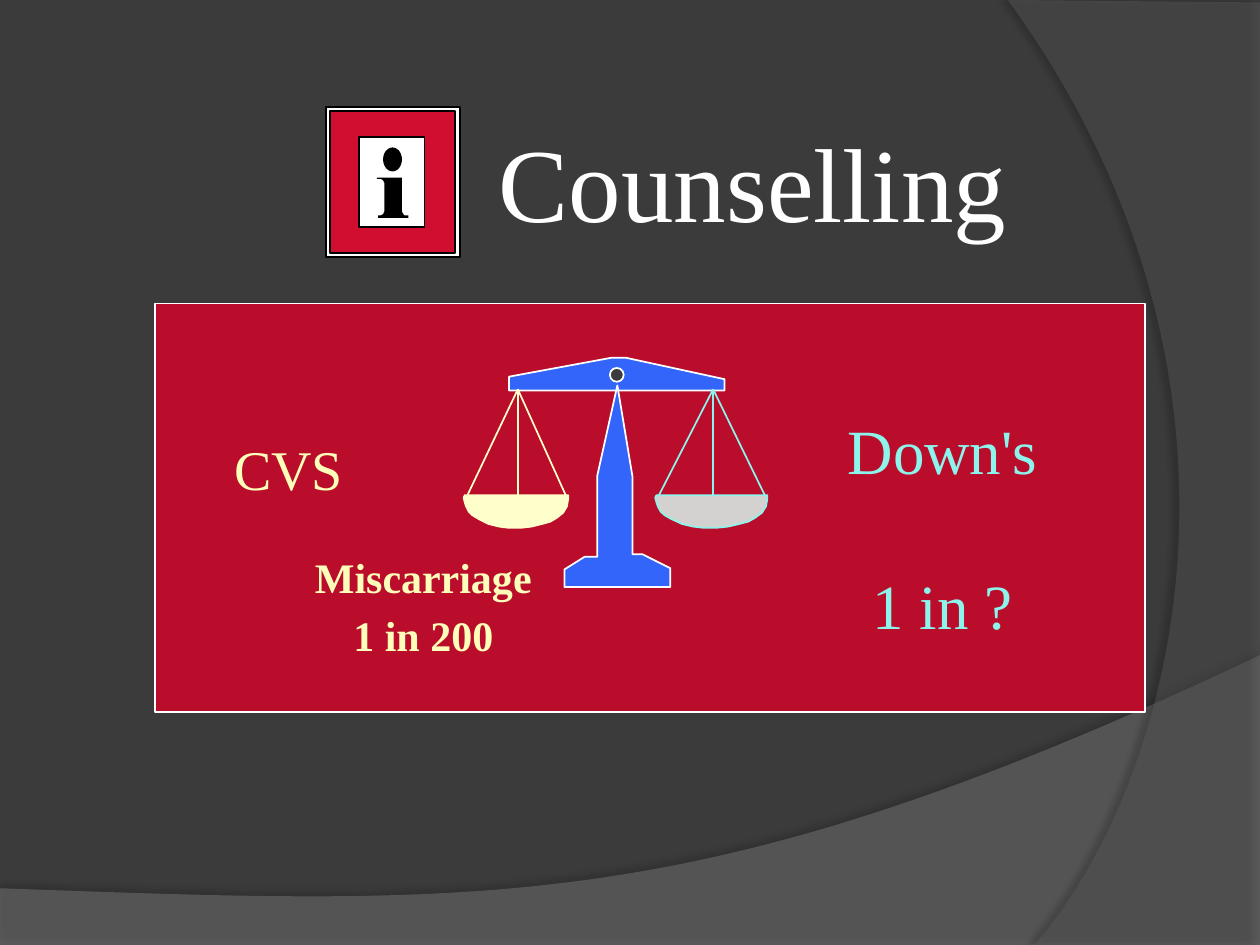
from lxml import etree
from pptx import Presentation
from pptx.dml.color import RGBColor
from pptx.enum.shapes import MSO_CONNECTOR as CONN, MSO_SHAPE as SHAPE
from pptx.enum.text import MSO_ANCHOR, MSO_AUTO_SIZE, PP_ALIGN
from pptx.oxml import parse_xml
from pptx.oxml.ns import nsdecls, qn
from pptx.util import Inches, Pt

FONT = "Times New Roman"
BACK, WHITE, BLACK = "3B3B3B", "FFFFFF", "000000"
BLUE, CREAM, AQUA, YELLOW = "3365FB", "FFFFCC", "8CF4EA", "FCFEB9"

# Swooshes: points before the curve, its four Bezier points, points after it
LOWER = ([(0, 7.5), (10, 7.5)],
         [(10, 5.2), (5.59, 7.29), (3.91, 7.19), (0, 7.05)], [])
RIGHT = ([(10, 0.02), (10, 7.5)],
         [(8.21, 7.5), (9.35, 6.19), (10.18, 3), (8, 0)], [])
SWOOSHES = [  # outline, fill, opacity, shadow opacity, distance, direction
    (LOWER, "7F7F7F", 45, 35, 3.5, 270),
    (RIGHT, "5E5E5E", 40, 45, 4, 180),
]

BEAM = [(4.04, 3.1), (5.75, 3.1), (5.75, 3.01), (4.97, 2.84), (4.85, 2.84),
        (4.04, 2.99)]
STAND = [(4.9, 3.06), (5.02, 3.78), (5.02, 4.4), (5.1, 4.4), (5.32, 4.51),
         (5.32, 4.66), (4.48, 4.66), (4.48, 4.52), (4.64, 4.42),
         (4.74, 4.42), (4.74, 3.78)]
PAN_TOP, PAN_WIDTH = 3.93, 0.83
PAN = [(0.01, 0), (0, 0.02), (0.01, 0.06), (0.02, 0.09), (0.04, 0.13),
       (0.07, 0.16), (0.12, 0.19), (0.2, 0.23), (0.28, 0.25), (0.36, 0.26),
       (0.45, 0.26), (0.54, 0.25), (0.62, 0.23), (0.69, 0.21), (0.74, 0.18),
       (0.79, 0.14), (0.82, 0.09), (0.83, 0.03), (0.83, 0)]
PANS = [  # left, width, fill, line, hook x, string ends
    (3.68, 0.83, CREAM, CREAM, 4.11, (4.49, 4.11, 3.71)),
    (5.2, 0.89, "D4D2D0", AQUA, 5.66, (6.07, 5.66, 5.23)),
]

SIGN = [  # shape, place, fill, line
    (SHAPE.RECTANGLE, (2.59, 0.85, 1.06, 1.19), WHITE, BLACK),
    (SHAPE.RECTANGLE, (2.62, 0.88, 0.99, 1.13), "CF0E30", BLACK),
    (SHAPE.RECTANGLE, (2.85, 1.09, 0.52, 0.71), WHITE, BLACK),
    (SHAPE.OVAL, (3.04, 1.17, 0.15, 0.19), BLACK, None),
]
STEM = [(2.99, 1.41), (3.19, 1.41), (3.19, 1.68), (3.2, 1.7), (3.21, 1.71),
        (3.24, 1.71), (3.24, 1.73), (3, 1.73), (3, 1.71), (3.02, 1.71),
        (3.04, 1.7), (3.05, 1.68), (3.05, 1.45), (3.04, 1.43), (3.02, 1.42),
        (2.99, 1.42)]

TITLE = ("Counselling", (3.86, 0.85, 4.65, 1.1), 60, WHITE)
LABELS = [  # lines, place, size, colour, bold, align, spacing, gap in points
    (["Down's", "1 in ?"], (6.28, 3.4, 2.4, 1.78), 36, AQUA, False,
     PP_ALIGN.CENTER, 0.6, 62.5),
    (["CVS"], (1.76, 3.37, 1.17, 0.63), 32, YELLOW, False,
     PP_ALIGN.LEFT, 1.0, 0),
    (["Miscarriage", "1 in 200"], (2.29, 4.41, 2.14, 0.86), 24, YELLOW, True,
     PP_ALIGN.CENTER, 0.7, 12.5),
]


def rgb(value):
    return RGBColor.from_string(value)


def paint(shape, fill, line=None):
    shape.shadow.inherit = False
    shape.fill.solid()
    shape.fill.fore_color.rgb = rgb(fill)
    if line:
        shape.line.color.rgb = rgb(line)
        shape.line.width = Pt(1)
    else:
        shape.line.fill.background()
    return shape


def add_preset(shapes, kind, place, fill, line=None):
    return paint(shapes.add_shape(kind, *map(Inches, place)), fill, line)


def add_outline(shapes, points, fill, line=None):
    pts = [(Inches(x), Inches(y)) for x, y in points]
    builder = shapes.build_freeform(*pts[0])
    builder.add_line_segments(pts[1:], close=True)
    return paint(builder.convert_to_shape(), fill, line)


def add_string(shapes, start, end, color):
    c = shapes.add_connector(CONN.STRAIGHT, *map(Inches, start + end))
    c.line.color.rgb = rgb(color)
    c.line.width = Pt(1)
    etree.SubElement(c._element.spPr, qn("a:effectLst"))


def bezier(curve, steps=60):
    """Return points along a cubic Bezier curve."""
    points = []
    for i in range(steps + 1):
        t = i / steps
        weights = ((1 - t) ** 3, 3 * t * (1 - t) ** 2,
                   3 * t * t * (1 - t), t ** 3)
        points.append(tuple(sum(w * p[k] for w, p in zip(weights, curve))
                            for k in (0, 1)))
    return points


def add_swoosh(shapes, outline, fill, opacity, shade, dist, direction):
    before, curve, after = outline
    sp = add_outline(shapes, before + bezier(curve) + after, fill)
    color = sp._element.spPr.find(qn("a:solidFill"))[0]
    etree.SubElement(color, qn("a:alpha"), val=str(opacity * 1000))
    effects = sp._element.spPr.find(qn("a:effectLst"))
    effects.append(parse_xml(
        f'<a:outerShdw {nsdecls("a")} blurRad="{Pt(4)}" dist="{Pt(dist)}" '
        f'dir="{direction * 60000}" algn="ctr" rotWithShape="0">'
        f'<a:srgbClr val="{BLACK}"><a:alpha val="{shade * 1000}"/>'
        '</a:srgbClr></a:outerShdw>'))


def write(shape, lines, size, color, bold=False, align=PP_ALIGN.LEFT,
          spacing=1.0, gap=0):
    tf = shape.text_frame
    tf.word_wrap = True
    tf.auto_size = MSO_AUTO_SIZE.NONE
    tf.vertical_anchor = MSO_ANCHOR.TOP
    tf.margin_left = tf.margin_right = Inches(0.1)
    tf.margin_top, tf.margin_bottom = Inches(0.08), Inches(0.05)
    for i, text in enumerate(lines):
        p = tf.add_paragraph() if i else tf.paragraphs[0]
        p.alignment = align
        p.line_spacing = spacing
        p.space_before = Pt(gap if i else 0)
        r = p.add_run()
        r.text = text
        r.font.name, r.font.size, r.font.bold = FONT, Pt(size), bold
        r.font.color.rgb = rgb(color)


def add_scales(shapes):
    add_outline(shapes, BEAM, BLUE, WHITE)
    add_preset(shapes, SHAPE.OVAL, (4.84, 2.92, 0.11, 0.11), BACK, WHITE)
    add_outline(shapes, STAND, BLUE, WHITE)
    for left, width, fill, line, hook, ends in PANS:
        for end in ends:
            add_string(shapes, (hook, 3.09), (end, PAN_TOP), line)
        add_outline(shapes, [(left + x * width / PAN_WIDTH, PAN_TOP + y)
                             for x, y in PAN], fill, line)


def main():
    prs = Presentation()
    prs.slide_width, prs.slide_height = Inches(10), Inches(7.5)
    s = prs.slides.add_slide(prs.slide_layouts[5])
    s.background.fill.solid()
    s.background.fill.fore_color.rgb = rgb(BACK)

    text, place, size, color = TITLE
    title = s.shapes.title
    title.left, title.top, title.width, title.height = map(Inches, place)
    write(title, [text], size, color)

    for swoosh in SWOOSHES:
        add_swoosh(s.shapes, *swoosh)
    add_preset(s.shapes, SHAPE.RECTANGLE, (1.23, 2.41, 7.86, 3.24),
               "BA0C2B", WHITE)
    add_scales(s.shapes.add_group_shape().shapes)

    sign = s.shapes.add_group_shape().shapes
    for part in SIGN:
        add_preset(sign, *part)
    add_outline(sign, STEM, BLACK)

    for lines, place, *style in LABELS:
        write(s.shapes.add_textbox(*map(Inches, place)), lines, *style)
    prs.save("out.pptx")


if __name__ == "__main__":
    main()
